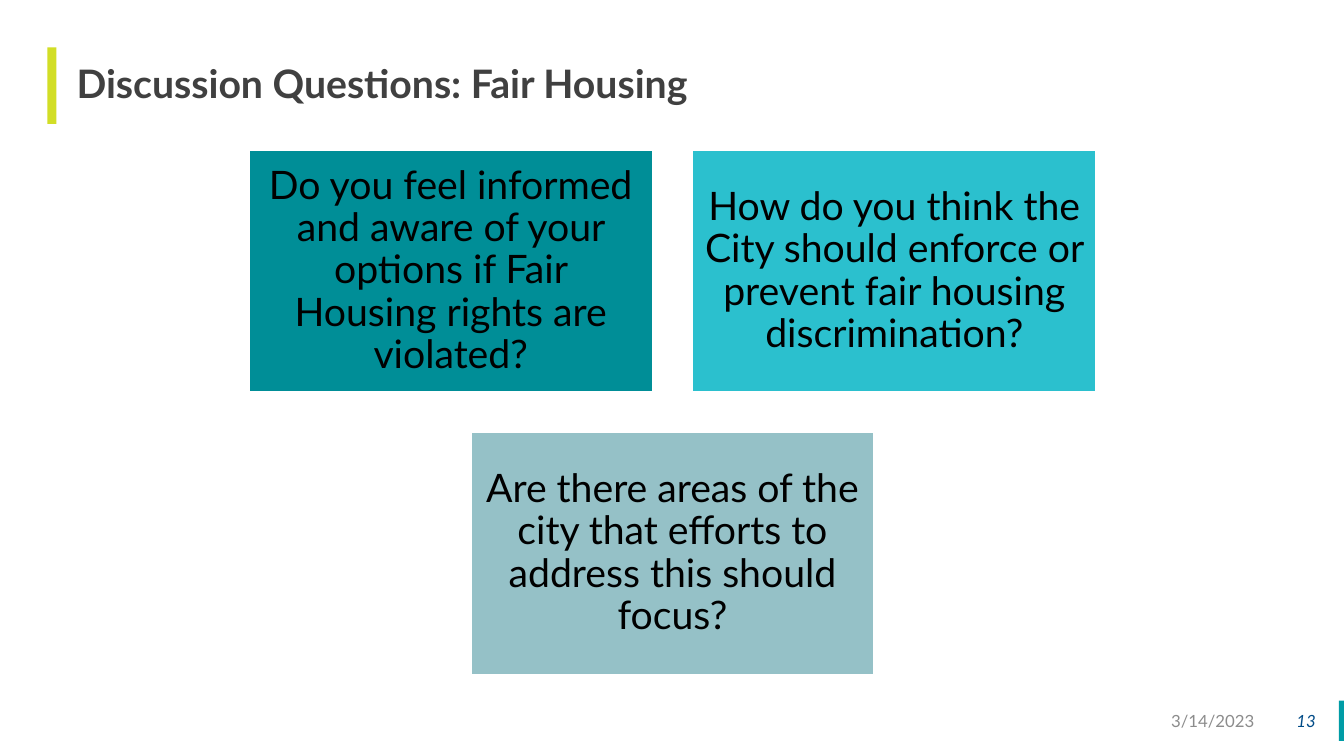
import pptx
import pptx.dml.color
import pptx.enum.shapes
import pptx.enum.text
import pptx.util

Inches = pptx.util.Inches
ALIGN = pptx.enum.text.PP_ALIGN
QUESTIONS = [
    ("Do you feel informed and aware of your options if Fair Housing rights are violated?", "008E97"),
    ("How do you think the City should enforce or prevent fair housing discrimination?", "2BC0CE"),
    ("Are there areas of the city that efforts to address this should focus?", "95C1C7"),
]


def color(hex_string):
    """Turn a hex string into a colour."""
    return pptx.dml.color.RGBColor.from_string(hex_string)


def add_rectangle(page, left, top, width, height, fill, line=None):
    """Draw a filled rectangle with an optional outline."""
    shape = page.shapes.add_shape(
        pptx.enum.shapes.MSO_SHAPE.RECTANGLE,
        Inches(left), Inches(top), Inches(width), Inches(height))
    shape.shadow.inherit = False
    shape.fill.solid()
    shape.fill.fore_color.rgb = color(fill)
    if line:
        shape.line.color.rgb = color(line)
        shape.line.width = pptx.util.Pt(1)
    else:
        shape.line.fill.background()
    return shape


def add_textbox(page, left, top, width, height):
    """Add an empty text box."""
    return page.shapes.add_textbox(Inches(left), Inches(top), Inches(width), Inches(height))


def write(box, text, size=28, ink="000000", align=ALIGN.LEFT, bold=False,
          italic=False, spacing=1.0, insets=(0.1, 0.05, 0.1, 0.05)):
    """Write one formatted paragraph, centred vertically in its box."""
    frame = box.text_frame
    frame.word_wrap = True
    frame.vertical_anchor = pptx.enum.text.MSO_ANCHOR.MIDDLE
    (frame.margin_left, frame.margin_top,
     frame.margin_right, frame.margin_bottom) = map(Inches, insets)
    para = frame.paragraphs[0]
    para.alignment = align
    para.line_spacing = spacing
    span = para.add_run()
    span.text = text
    span.font.name = "Lato"
    span.font.size = pptx.util.Pt(size)
    span.font.bold = bold
    span.font.italic = italic
    span.font.color.rgb = color(ink)


def add_title(page, left, top, width, height, text):
    """Place the accent bar and the title beside it."""
    bar = 0.09
    add_rectangle(page, left, top, bar, height, "D2DE26")
    box = add_textbox(page, left + bar, top, width - bar, height)
    write(box, text, ink="404040", bold=True, spacing=0.9, insets=(0.2, 0, 0, 0))


def add_question_cards(page, left, top, width, height, questions, columns=2, gap=0.4):
    """Fill the area with cards in rows, centring a short last row."""
    rows = [questions[i:i + columns] for i in range(0, len(questions), columns)]
    card_width = (width - gap * (columns - 1)) / columns
    card_height = (height - gap * (len(rows) - 1)) / len(rows)
    for row_index, row in enumerate(rows):
        row_width = len(row) * (card_width + gap) - gap
        row_left = left + (width - row_width) / 2
        card_top = top + row_index * (card_height + gap)
        for column, (question, fill) in enumerate(row):
            card = add_rectangle(page, row_left + column * (card_width + gap), card_top,
                                 card_width, card_height, fill, line="FFFFFF")
            write(card, question, align=ALIGN.CENTER, spacing=0.9, insets=(0.12,) * 4)


def add_footer(page, left, top, width, height, date, number):
    """Place the date, the page number and the edge mark."""
    right = left + width
    add_rectangle(page, right - 0.05, top, 0.05, height, "009CA6")
    write(add_textbox(page, left, top, 3, height), date,
          size=12, ink="8C8C8C", align=ALIGN.RIGHT)
    write(add_textbox(page, left + 3, top, 0.61, height), number,
          size=12, ink="004B87", align=ALIGN.RIGHT, italic=True)


def main():
    """Build the deck and save it."""
    deck = pptx.Presentation()
    deck.slide_width = Inches(13.33)
    deck.slide_height = Inches(7.5)
    page = deck.slides.add_slide(deck.slide_layouts[6])
    add_title(page, 0.47, 0.47, 12.41, 0.76, "Discussion Questions: Fair Housing")
    add_question_cards(page, 2.47, 1.49, 8.4, 5.2, QUESTIONS)
    add_footer(page, 9.54, 6.95, 3.79, 0.4, "3/14/2023", "13")
    deck.save("out.pptx")


if __name__ == "__main__":
    main()
